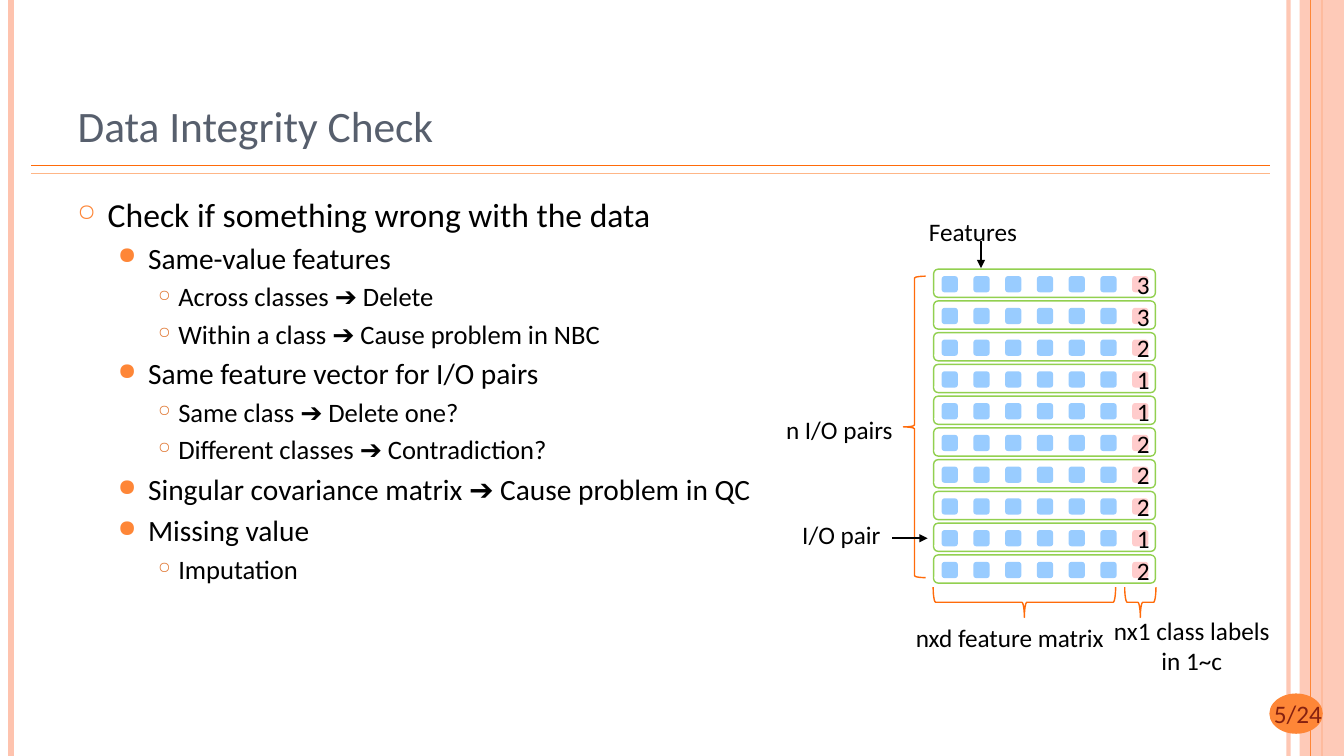
from lxml import etree
from pptx import Presentation
from pptx.dml.color import RGBColor
from pptx.enum.shapes import MSO_CONNECTOR, MSO_SHAPE
from pptx.enum.text import MSO_ANCHOR, MSO_AUTO_SIZE, PP_ALIGN
from pptx.oxml.ns import qn
from pptx.util import Inches, Pt

LINE = MSO_CONNECTOR.STRAIGHT
RECT, ROUND = MSO_SHAPE.RECTANGLE, MSO_SHAPE.ROUNDED_RECTANGLE
OVAL, BRACE = MSO_SHAPE.OVAL, MSO_SHAPE.LEFT_BRACE
LEFT, CENTER, RIGHT = PP_ALIGN.LEFT, PP_ALIGN.CENTER, PP_ALIGN.RIGHT
TOP, MIDDLE, BOTTOM = MSO_ANCHOR.TOP, MSO_ANCHOR.MIDDLE, MSO_ANCHOR.BOTTOM
FIXED, GROW = MSO_AUTO_SIZE.NONE, MSO_AUTO_SIZE.SHAPE_TO_FIT_TEXT

BLACK, ORANGE, DEEP, PEACH = "000000", "FE8637", "FF6B0A", "FEC3AE"

# Per level: size, left margin, hanging indent, bullet, colour, bullet percent
LEVELS = [
    (24, 0.3, 0.3, "○", ORANGE, 70),
    (21, 0.7, 0.3, "●", ORANGE, 80),
    (19, 1.0, 0.2, "○", "E07631", 60),
]
POINTS = [
    (0, "Check if something wrong with the data"),
    (1, "Same-value features"),
    (2, "Across classes ➔ Delete"),
    (2, "Within a class ➔ Cause problem in NBC"),
    (1, "Same feature vector for I/O pairs"),
    (2, "Same class ➔ Delete one?"),
    (2, "Different classes ➔ Contradiction?"),
    (1, "Singular covariance matrix ➔ Cause problem in QC"),
    (1, "Missing value"),
    (2, "Imputation"),
]
CLASSES = "3321122212"
FEATURES = 6
PITCH, CELL = 0.315, 0.16
GRID_X, GRID_Y = 9.34, 2.74


def color(code):
    return RGBColor.from_string(code)


def apply(obj, values):
    for name, value in values.items():
        setattr(obj, name, value)


def fade(fill, percent):
    """Set the opacity of a solid fill element."""
    tint = fill.find(".//" + qn("a:srgbClr"))
    etree.SubElement(tint, qn("a:alpha"), val=str(percent * 1000))


class Page:
    def __init__(self, deck, font):
        self.font = font
        self.slide = deck.slides.add_slide(deck.slide_layouts[5])
        self.shapes = self.slide.shapes

    def run(self, par, text, size, code):
        run = par.add_run()
        run.text = text
        apply(run.font, {"name": self.font, "size": Pt(size)})
        run.font.color.rgb = color(code)

    def line(self, x1, y1, x2, y2, code, width, arrow=False, alpha=None):
        line = self.shapes.add_connector(
            LINE, Inches(x1), Inches(y1), Inches(x2), Inches(y2))
        line.line.color.rgb = color(code)
        line.line.width = Pt(width)
        props = line._element.spPr
        stroke = props.find(qn("a:ln"))
        if alpha:
            fade(stroke, alpha)
        if arrow:
            etree.SubElement(stroke, qn("a:tailEnd"), type="triangle")
        etree.SubElement(props, qn("a:effectLst"))

    def shape(self, kind, box, fill=None, edge=None, turn=0, host=None):
        shape = (host or self.shapes).add_shape(kind, *map(Inches, box))
        shape.shadow.inherit = False
        shape.rotation = turn
        if fill:
            shape.fill.solid()
            shape.fill.fore_color.rgb = color(fill)
        else:
            shape.fill.background()
        if edge:
            shape.line.color.rgb = color(edge)
            shape.line.width = Pt(1)
        else:
            shape.line.fill.background()
        return shape

    def label(self, box, text, align=CENTER, code=BLACK, wrap=False):
        frame = self.shapes.add_textbox(*map(Inches, box)).text_frame
        apply(frame, {"word_wrap": wrap, "auto_size": GROW})
        for i, part in enumerate(text.split("\n")):
            par = frame.add_paragraph() if i else frame.paragraphs[0]
            par.alignment = align
            self.run(par, part, 18, code)

    def title(self, box, text):
        title = self.shapes.title
        apply(title, dict(zip(("left", "top", "width", "height"),
                              map(Inches, box))))
        frame = title.text_frame
        apply(frame, {"word_wrap": True, "auto_size": FIXED,
                      "vertical_anchor": BOTTOM})
        frame.paragraphs[0].alignment = LEFT
        self.run(frame.paragraphs[0], text, 31, "575F6D")

    def bullets(self, box, points):
        frame = self.shapes.add_textbox(*map(Inches, box)).text_frame
        apply(frame, {"word_wrap": True, "auto_size": FIXED,
                      "vertical_anchor": TOP})
        for i, (level, text) in enumerate(points):
            size, margin, hang, sign, code, percent = LEVELS[level]
            par = frame.add_paragraph() if i else frame.paragraphs[0]
            par.level = level
            props = par._p.get_or_add_pPr()
            props.set("marL", str(Inches(margin)))
            props.set("indent", str(-Inches(hang)))
            tint = etree.SubElement(props, qn("a:buClr"))
            etree.SubElement(tint, qn("a:srgbClr"), val=code)
            etree.SubElement(props, qn("a:buSzPct"), val=str(percent * 1000))
            etree.SubElement(props, qn("a:buChar"), char=sign)
            if i:
                par.space_before = Pt(size * 0.2)
            self.run(par, text, size, BLACK)

    def digit(self, box, text):
        frame = self.shape(ROUND, box, "FFCCCC").text_frame
        apply(frame, {"word_wrap": False, "vertical_anchor": MIDDLE,
                      "margin_left": Inches(0.06), "margin_right": 0,
                      "margin_top": 0, "margin_bottom": 0})
        frame.paragraphs[0].alignment = CENTER
        self.run(frame.paragraphs[0], text, 18, BLACK)


def frame(page):
    """Draw the side bands, the title rules and the page number."""
    page.line(12.78, 0, 12.78, 7.5, PEACH, 3, alpha=93)
    page.line(0.11, 0, 0.11, 7.5, PEACH, 4.5)
    page.line(13.11, 0, 13.11, 7.5, ORANGE, 1.5)
    band = page.shape(RECT, (12.89, 0, 0.44, 7.5), PEACH)
    fade(band._element.spPr.find(qn("a:solidFill")), 87)
    page.line(13, 0, 13, 7.5, ORANGE, 0.75)
    page.line(0.31, 1.64, 12.6, 1.64, DEEP, 1)
    page.line(0.31, 1.72, 12.6, 1.72, "FEB687", 1)
    page.shape(OVAL, (12.59, 6.88, 0.53, 0.4), ORANGE)
    page.label((12, 6.88, 1.21, 0.4), "5/24", RIGHT, "862110", True)


def matrix(page):
    """Draw one outlined row of features and class label per pair."""
    for row, name in enumerate(CLASSES):
        y = GRID_Y + row * PITCH
        group = page.shapes.add_group_shape().shapes
        for col in range(FEATURES):
            page.shape(ROUND, (GRID_X + col * PITCH, y, CELL, CELL),
                       "99CCFF", host=group)
        page.digit((GRID_X + FEATURES * PITCH, y, CELL, CELL), name)
        page.shape(ROUND, (GRID_X - 0.08, y - 0.07, 2.2, 0.28), edge="92D050")


def notes(page):
    """Draw the braces, arrows and labels around the matrix."""
    for box, turn in (((10.01, 5.07, 0.3, 1.81), 270),
                      ((11.16, 5.82, 0.3, 0.31), 270),
                      ((8.96, 2.74, 0.22, 2.99), 0)):
        page.shape(BRACE, box, edge=DEEP, turn=turn)
    page.line(9.73, 2.39, 9.73, 2.66, BLACK, 1.75, arrow=True)
    page.line(8.85, 5.34, 9.2, 5.34, BLACK, 1.75, arrow=True)
    page.label((8.97, 6.12, 2.09, 0.4), "nxd feature matrix")
    page.label((10.91, 6.05, 1.82, 0.71), "nx1 class labels\nin 1~c")
    page.label((7.85, 5.1, 0.99, 0.4), "I/O pair")
    page.label((7.69, 4.06, 1.27, 0.4), "n I/O pairs")
    page.label((9.11, 2.1, 1.08, 0.4), "Features")


def main():
    deck = Presentation()
    deck.slide_width, deck.slide_height = Inches(13.33), Inches(7.5)
    page = Page(deck, "Calibri")
    frame(page)
    page.title((0.67, 0.3, 10.89, 1.25), "Data Integrity Check")
    page.bullets((0.67, 1.87, 10.89, 5.21), POINTS)
    matrix(page)
    notes(page)
    deck.save("out.pptx")


if __name__ == "__main__":
    main()
